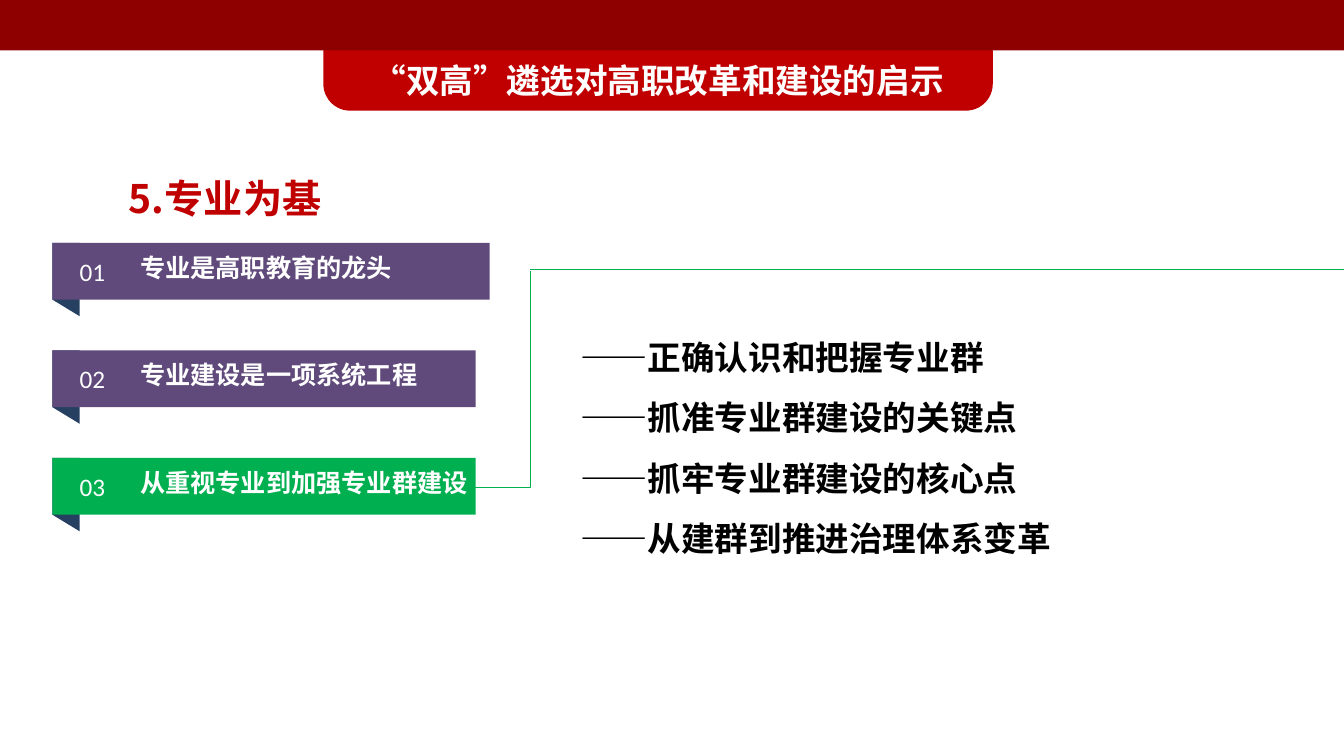
from dataclasses import dataclass

from lxml import etree
from pptx import Presentation
from pptx.dml.color import RGBColor
from pptx.enum.shapes import MSO_CONNECTOR, MSO_SHAPE
from pptx.enum.text import MSO_ANCHOR, MSO_AUTO_SIZE, PP_ALIGN
from pptx.oxml.ns import qn
from pptx.util import Cm, Pt

RECT, ROUND = MSO_SHAPE.RECTANGLE, MSO_SHAPE.ROUNDED_RECTANGLE
STRAIGHT, ELBOW = MSO_CONNECTOR.STRAIGHT, MSO_CONNECTOR.ELBOW
TOP, MIDDLE = MSO_ANCHOR.TOP, MSO_ANCHOR.MIDDLE
LEFT, CENTER, JUSTIFY = PP_ALIGN.LEFT, PP_ALIGN.CENTER, PP_ALIGN.JUSTIFY

CJK, LATIN = "Noto Sans CJK SC", "Calibri"
RED, DARK_RED, PURPLE, GREEN = "C00000", "8E0000", "604A7B", "00B050"
NAVY, WHITE, BLACK = "254061", "FFFFFF", "000000"
WIDTH, HEIGHT = 33.87, 19.05
BANNER_LEFT, BANNER_TOP, BANNER_HEIGHT, BANNER_PITCH = 1.32, 6.12, 1.43, 2.71
FOLD_WIDTH, FOLD_HEIGHT = 0.69, 1.85


@dataclass
class Banner:
    text: str
    width: float
    color: str


@dataclass
class TextStyle:
    size: float
    color: str
    font: str = CJK
    bold: bool = True
    align: PP_ALIGN = LEFT
    spacing: float = 1.0


BANNERS = [
    Banner("专业是高职教育的龙头", 11.02, PURPLE),
    Banner("专业建设是一项系统工程", 10.67, PURPLE),
    Banner("从重视专业到加强专业群建设", 10.67, GREEN),
]
POINTS = [
    "——正确认识和把握专业群",
    "——抓准专业群建设的关键点",
    "——抓牢专业群建设的核心点",
    "——从建群到推进治理体系变革",
]
TITLE_STYLE = TextStyle(24, WHITE, align=CENTER)
HEADING_STYLE = TextStyle(28, RED, spacing=1.5)
BANNER_STYLE = TextStyle(18, WHITE, align=JUSTIFY)
NUMBER_STYLE = TextStyle(18, WHITE, LATIN, bold=False)
POINT_STYLE = TextStyle(24, BLACK, spacing=1.5)


def rgb(color: str) -> RGBColor:
    return RGBColor.from_string(color)


def paint(sp, color: str) -> None:
    sp.shadow.inherit = False
    sp.fill.solid()
    sp.fill.fore_color.rgb = rgb(color)
    sp.line.fill.background()


def write(sp, lines: list[str], style: TextStyle, anchor=TOP,
          insets=(0.25, 0.13, 0.25, 0.13), wrap: bool = True) -> None:
    tf = sp.text_frame
    tf.text = "\n".join(lines)
    tf.word_wrap = wrap
    tf.auto_size = MSO_AUTO_SIZE.NONE
    tf.vertical_anchor = anchor
    tf.margin_left, tf.margin_top, tf.margin_right, tf.margin_bottom = map(Cm, insets)
    for p in tf.paragraphs:
        p.alignment = style.align
        p.line_spacing = style.spacing
        font = p.font
        font.size, font.bold, font.name = Pt(style.size), style.bold, style.font
        font.color.rgb = rgb(style.color)
        # East Asian typeface follows the Latin one
        latin = p._p.pPr.find(qn("a:defRPr")).find(qn("a:latin"))
        ea = etree.Element(qn("a:ea"), typeface=style.font)
        latin.addnext(ea)


def add_box(shapes, kind, left: float, top: float, width: float, height: float, color: str):
    sp = shapes.add_shape(kind, Cm(left), Cm(top), Cm(width), Cm(height))
    paint(sp, color)
    return sp


def add_text(shapes, left: float, top: float, width: float, height: float):
    return shapes.add_textbox(Cm(left), Cm(top), Cm(width), Cm(height))


def add_line(shapes, kind, x1: float, y1: float, x2: float, y2: float):
    line = shapes.add_connector(kind, Cm(x1), Cm(y1), Cm(x2), Cm(y2))
    line.line.color.rgb = rgb(GREEN)
    line.line.width = Pt(0.75)
    etree.SubElement(line.element.spPr, qn("a:effectLst"))
    return line


def add_banner(shapes, number: int, banner: Banner) -> None:
    top = BANNER_TOP + (number - 1) * BANNER_PITCH
    right = BANNER_LEFT + FOLD_WIDTH
    # Folded corner behind the banner
    fold = shapes.build_freeform(Cm(BANNER_LEFT), Cm(top))
    fold.add_line_segments([
        (Cm(right), Cm(top)),
        (Cm(right), Cm(top + FOLD_HEIGHT)),
        (Cm(BANNER_LEFT), Cm(top + BANNER_HEIGHT)),
    ])
    paint(fold.convert_to_shape(), NAVY)
    sp = add_box(shapes, RECT, BANNER_LEFT, top, banner.width, BANNER_HEIGHT, banner.color)
    write(sp, [banner.text], BANNER_STYLE, MIDDLE, (2.21, 0.1, 0.1, 0.3))
    label = add_text(shapes, right, top + 0.2, 1.3, 1.03)
    write(label, [f"{number:02}"], NUMBER_STYLE, MIDDLE, (0, 0.13, 0, 0.13))


def main() -> None:
    prs = Presentation()
    prs.slide_width, prs.slide_height = Cm(WIDTH), Cm(HEIGHT)
    slide = prs.slides.add_slide(prs.slide_layouts[5])
    shapes = slide.shapes

    # Rule and section heading
    add_line(shapes, STRAIGHT, 13.36, 6.78, WIDTH, 6.78)
    write(add_text(shapes, 3, 3.68, 30.8, 1.83), ["5.专业为基"], HEADING_STYLE)

    # Title on its red tab, under the top bar
    tab = add_box(shapes, ROUND, 8.15, 0.61, 16.87, 2.18, RED)
    tab.adjustments[0] = 0.31
    title = shapes.title
    title.left, title.top, title.width, title.height = map(Cm, (9.04, 1.37, 15.09, 1.27))
    write(title, ["“双高”遴选对高职改革和建设的启示"], TITLE_STYLE, MIDDLE, wrap=False)
    tab.element.addnext(title.element)
    add_box(shapes, RECT, 0, 0, WIDTH, 1.27, DARK_RED)

    # Numbered banners
    for number, banner in enumerate(BANNERS, 1):
        add_banner(shapes, number, banner)

    # Key points of the third banner
    points = add_text(shapes, 13.61, 7.85, 19.41, 6.4)
    write(points, POINTS, POINT_STYLE, insets=(1.02, 0.13, 0.25, 0.13))

    # Elbow from the third banner to the rule, turning at its far end
    elbow = add_line(shapes, ELBOW, 11.98, 12.29, 13.36, 6.83)
    guides = elbow.element.spPr.find(qn("a:prstGeom")).find(qn("a:avLst"))
    etree.SubElement(guides, qn("a:gd"), name="adj1", fmla="val 100000")

    prs.save("out.pptx")


if __name__ == "__main__":
    main()
